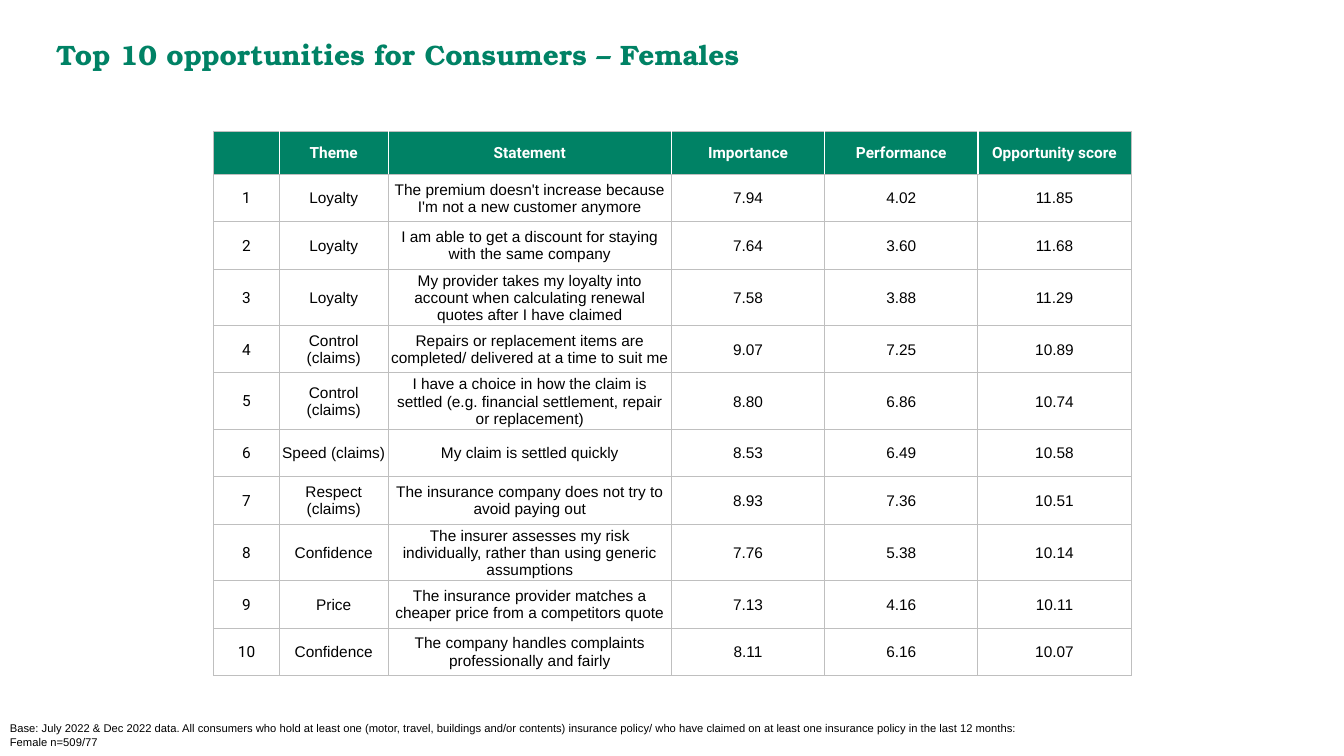
from lxml import etree
from pptx import Presentation
from pptx import util as u
from pptx.dml.color import RGBColor
from pptx.enum import text
from pptx.oxml.ns import qn

GREEN = RGBColor(0x00, 0x82, 0x65)
GREY = RGBColor(0xBF, 0xBF, 0xBF)
WHITE = RGBColor(0xFF, 0xFF, 0xFF)
BLACK = RGBColor(0x00, 0x00, 0x00)

COLS = [0.65, 1.08, 2.81, 1.52, 1.52, 1.52]
HEAD = ["", "Theme", "Statement", "Importance", "Performance", "Opportunity score"]
ROWS = [
    ("Loyalty", "The premium doesn't increase because I'm not a new customer anymore",
     "7.94", "4.02", "11.85"),
    ("Loyalty", "I am able to get a discount for staying with the same company",
     "7.64", "3.60", "11.68"),
    ("Loyalty", "My provider takes my loyalty into account when calculating renewal "
     "quotes after I have claimed", "7.58", "3.88", "11.29"),
    ("Control (claims)", "Repairs or replacement items are completed/ delivered at a "
     "time to suit me", "9.07", "7.25", "10.89"),
    ("Control (claims)", "I have a choice in how the claim is settled (e.g. financial "
     "settlement, repair or replacement)", "8.80", "6.86", "10.74"),
    ("Speed (claims)", "My claim is settled quickly", "8.53", "6.49", "10.58"),
    ("Respect (claims)", "The insurance company does not try to avoid paying out",
     "8.93", "7.36", "10.51"),
    ("Confidence", "The insurer assesses my risk individually, rather than using "
     "generic assumptions", "7.76", "5.38", "10.14"),
    ("Price", "The insurance provider matches a cheaper price from a competitors quote",
     "7.13", "4.16", "10.11"),
    ("Confidence", "The company handles complaints professionally and fairly",
     "8.11", "6.16", "10.07"),
]
BASE = [
    "Base: July 2022 & Dec 2022 data. All consumers who hold at least one (motor, travel, "
    "buildings and/or contents) insurance policy/ who have claimed on at least one "
    "insurance policy in the last 12 months:",
    "Female n=509/77",
]


def style(font, color, **look):
    for key, val in look.items():
        setattr(font, key, val)
    font.color.rgb = color


def write(slide, box, lines, color, **look):
    """Text box with one paragraph per line."""
    frame = slide.shapes.add_textbox(*map(u.Inches, box)).text_frame
    frame.word_wrap = True
    frame.text = "\n".join(lines)
    for para in frame.paragraphs:
        style(para.font, color, **look)


def edge(cell, side, color, width):
    line = etree.SubElement(cell._tc.get_or_add_tcPr(), qn("a:ln" + side),
                            w=str(u.Pt(width)))
    fill = etree.SubElement(line, qn("a:solidFill"))
    etree.SubElement(fill, qn("a:srgbClr"), val=str(color))


def fill_cell(cell, words, row, col):
    head = row == 0
    # Borders: white between header cells, grey elsewhere
    inner = {"L": col > 0, "R": col < len(COLS) - 1, "T": False, "B": False}
    for side, inside in inner.items():
        edge(cell, side, *((WHITE, 1) if head and inside else (GREY, 0.75)))
    if head:
        cell.fill.solid()
        cell.fill.fore_color.rgb = GREEN
    else:
        cell.fill.background()
    # Text
    pad = u.Inches(0.01)
    fmt = dict(margin_left=pad, margin_right=pad, margin_top=pad, margin_bottom=0,
               vertical_anchor=text.MSO_ANCHOR.MIDDLE, text=words)
    for key, val in fmt.items():
        setattr(cell, key, val)
    para = cell.text_frame.paragraphs[0]
    para.alignment = text.PP_ALIGN.CENTER
    style(para.font, WHITE if head else BLACK, size=u.Pt(11), bold=head,
          name="Roboto" if head or col == 0 else "Arial")


def rank(slide, left, top, head, tall):
    """Table of ranked statements."""
    data = [HEAD] + [(str(i), *row) for i, row in enumerate(ROWS, 1)]
    high = head + tall * len(ROWS)
    grid = slide.shapes.add_table(len(data), len(COLS), *map(
        u.Inches, (left, top, sum(COLS), high))).table
    grid.first_row = grid.horz_banding = False
    for col, wide in zip(grid.columns, COLS):
        col.width = u.Inches(wide)
    for r, row in enumerate(data):
        grid.rows[r].height = u.Inches(tall if r else head)
        for c, words in enumerate(row):
            fill_cell(grid.cell(r, c), words, r, c)


def main():
    deck = Presentation()
    deck.slide_width, deck.slide_height = u.Inches(13.33), u.Inches(7.5)
    slide = deck.slides.add_slide(deck.slide_layouts[6])
    # Title
    write(slide, (0.46, 0.32, 12.28, 0.44),
          ["Top 10 opportunities for Consumers – Females"], GREEN,
          name="TeX Gyre Bonum", size=u.Pt(20), bold=True)
    # Table
    rank(slide, 2.12, 1.3, 0.43, 0.47)
    # Base note
    write(slide, (0, 7.11, 11.16, 0.39), BASE, BLACK, name="Arial", size=u.Pt(8))
    deck.save("out.pptx")


if __name__ == "__main__":
    main()
